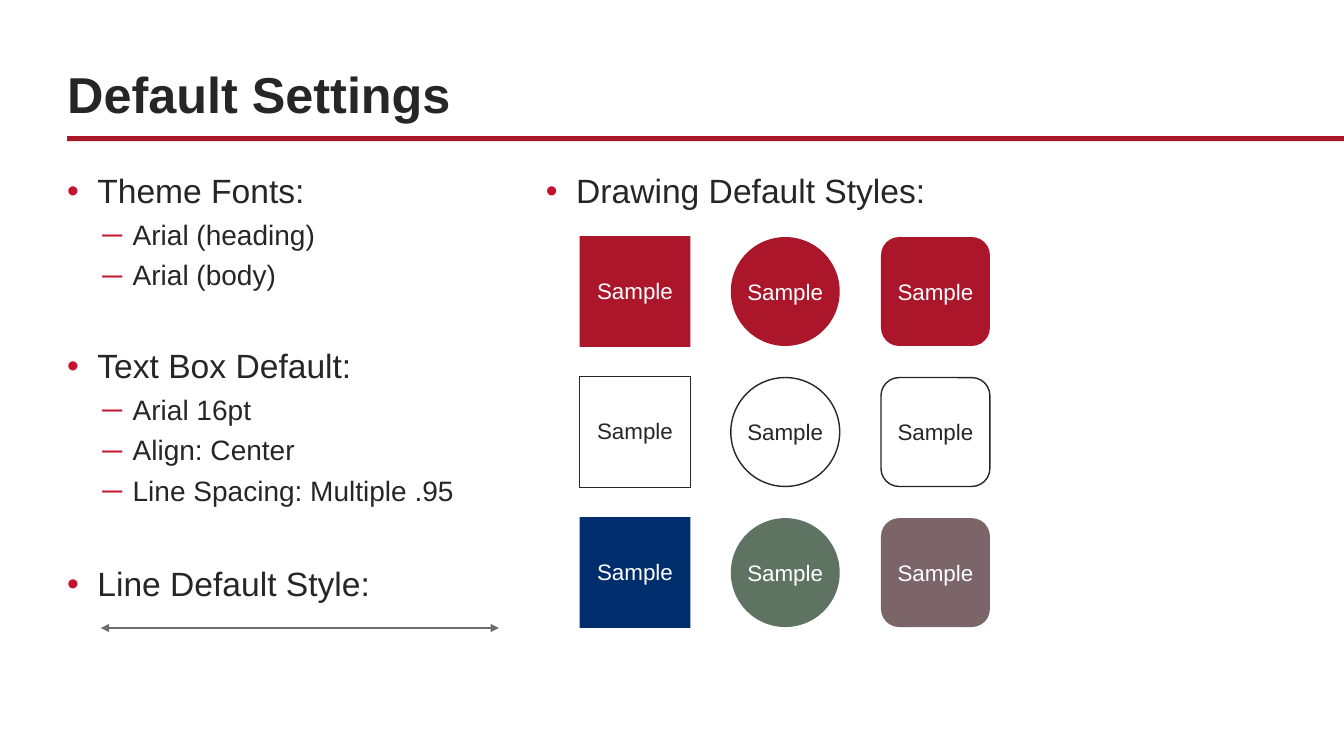
import pptx
import pptx.dml.color
import pptx.enum.shapes
import pptx.enum.text
import pptx.oxml.ns
import pptx.util
from lxml import etree

Pt = pptx.util.Pt
RGBColor = pptx.dml.color.RGBColor
Shape = pptx.enum.shapes.MSO_SHAPE
Anchor = pptx.enum.text.MSO_ANCHOR
Align = pptx.enum.text.PP_ALIGN
qn = pptx.oxml.ns.qn

RED = RGBColor(0xAB, 0x16, 0x2B)
BULLET_RED = RGBColor(0xC4, 0x12, 0x2F)
INK = RGBColor(0x27, 0x26, 0x26)
WHITE = RGBColor(0xFF, 0xFF, 0xFF)
NAVY = RGBColor(0x00, 0x2E, 0x6D)
GREEN = RGBColor(0x5E, 0x73, 0x61)
MAUVE = RGBColor(0x7C, 0x65, 0x69)
GRAY = RGBColor(0x6D, 0x6D, 0x6D)
FONT = "Arial"

TITLE = "Default Settings"
# Left, top, width, height and (level, text) items of each list
LISTS = [
    ((48, 120.2, 308.4, 365.8), [
        (0, "Theme Fonts:"),
        (1, "Arial (heading)"),
        (1, "Arial (body)"),
        (0, "Text Box Default:"),
        (1, "Arial 16pt"),
        (1, "Align: Center"),
        (1, "Line Spacing: Multiple .95"),
    ]),
    ((390, 120.2, 308.4, 36.7), [(0, "Drawing Default Styles:")]),
    ((48, 400.3, 308.4, 36.7), [(0, "Line Default Style:")]),
]
# Bullet, left margin, font size, space before
LEVELS = [("•", 21.6, 24, 40), ("─", 46.8, 20, 6)]
HANGING = 21.6

SAMPLE = "Sample"
# Preset, size, line spacing of each column
COLUMNS = [(Shape.RECTANGLE, 79.2, 0.95), (Shape.OVAL, 77.8, 1), (Shape.ROUNDED_RECTANGLE, 77.8, 1)]
# Fills, outline, text colour of each row
ROWS = [
    ((RED, RED, RED), None, WHITE),
    ((WHITE, WHITE, WHITE), INK, INK),
    ((NAVY, GREEN, MAUVE), None, WHITE),
]
FIRST_CENTER = (453.6, 208.2)
PITCH = (107.3, 100.4)


def set_font(paragraph, size, color, bold=False):
    font = paragraph.font
    font.name, font.size, font.bold = FONT, Pt(size), bold
    font.color.rgb = color


def set_frame(frame):
    frame.word_wrap = True
    frame.margin_left = frame.margin_right = 0
    frame.margin_top = frame.margin_bottom = Pt(3.6)


def place(shape, left, top, width, height):
    shape.left, shape.top, shape.width, shape.height = map(Pt, (left, top, width, height))


def add_bullet(paragraph, mark, margin):
    properties = paragraph._p.get_or_add_pPr()
    properties.set("marL", str(Pt(margin)))
    properties.set("indent", str(Pt(-HANGING)))
    color = etree.SubElement(properties, qn("a:buClr"))
    etree.SubElement(color, qn("a:srgbClr"), val=str(BULLET_RED))
    etree.SubElement(properties, qn("a:buFont"), typeface=FONT)
    etree.SubElement(properties, qn("a:buChar"), char=mark)


def add_list(page, bounds, items):
    frame = page.shapes.add_textbox(*map(Pt, bounds)).text_frame
    set_frame(frame)
    for index, (level, text) in enumerate(items):
        mark, margin, size, before = LEVELS[level]
        paragraph = frame.add_paragraph() if index else frame.paragraphs[0]
        paragraph.text = text
        paragraph.level = level
        add_bullet(paragraph, mark, margin)
        paragraph.line_spacing = 0.95
        paragraph.space_before = Pt(before if index else 0)
        set_font(paragraph, size, INK)


def add_filled(page, preset, bounds, fill, outline=None):
    shape = page.shapes.add_shape(preset, *map(Pt, bounds))
    shape.shadow.inherit = False
    shape.fill.solid()
    shape.fill.fore_color.rgb = fill
    if outline is None:
        shape.line.fill.background()
    else:
        shape.line.color.rgb = outline
        shape.line.width = Pt(1)
    return shape


def add_samples(page):
    for row, (fills, outline, text_color) in enumerate(ROWS):
        for column, (preset, size, spacing) in enumerate(COLUMNS):
            left = FIRST_CENTER[0] + column * PITCH[0] - size / 2
            top = FIRST_CENTER[1] + row * PITCH[1] - size / 2
            shape = add_filled(page, preset, (left, top, size, size), fills[column], outline)
            frame = shape.text_frame
            frame.word_wrap = False
            frame.vertical_anchor = Anchor.MIDDLE
            paragraph = frame.paragraphs[0]
            paragraph.text = SAMPLE
            paragraph.alignment = Align.CENTER
            paragraph.line_spacing = spacing
            set_font(paragraph, 16, text_color)


def add_double_arrow(page, left, right, height):
    arrow = page.shapes.add_connector(
        pptx.enum.shapes.MSO_CONNECTOR.STRAIGHT, Pt(left), Pt(height), Pt(right), Pt(height))
    arrow.line.color.rgb = GRAY
    arrow.line.width = Pt(1.5)
    line = arrow.line._get_or_add_ln()
    for end in ("a:headEnd", "a:tailEnd"):
        etree.SubElement(line, qn(end), type="triangle")
    etree.SubElement(arrow._element.spPr, qn("a:effectLst"))


def main():
    deck = pptx.Presentation()
    deck.slide_width, deck.slide_height = Pt(960), Pt(540)
    page = deck.slides.add_slide(deck.slide_layouts[5])

    title = page.shapes.title
    place(title, 48, 28.8, 864, 63.4)
    set_frame(title.text_frame)
    title.text_frame.vertical_anchor = Anchor.BOTTOM
    heading = title.text_frame.paragraphs[0]
    heading.text = TITLE
    heading.alignment = Align.LEFT
    heading.line_spacing = Pt(38)
    set_font(heading, 36, INK, bold=True)

    add_filled(page, Shape.RECTANGLE, (48, 97.2, 912, 3.6), RED)
    for bounds, items in LISTS:
        add_list(page, bounds, items)
    add_samples(page)
    add_double_arrow(page, 72, 356.4, 448.6)
    deck.save("out.pptx")


if __name__ == "__main__":
    main()
